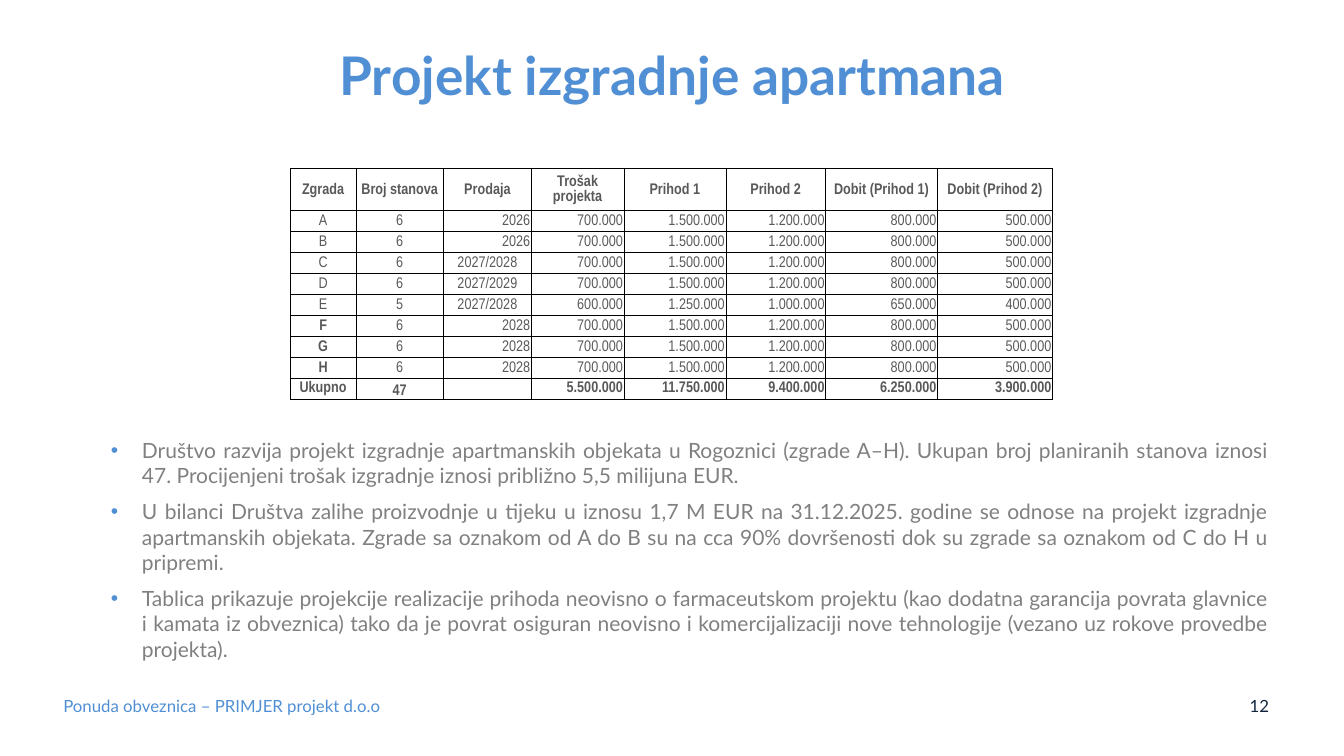
from dataclasses import dataclass

from lxml import etree
from pptx import Presentation
from pptx.dml.color import RGBColor
from pptx.enum.text import MSO_ANCHOR, PP_ALIGN
from pptx.oxml.ns import qn
from pptx.slide import Slide
from pptx.table import _Cell
from pptx.text.text import TextFrame, _Paragraph
from pptx.util import Inches, Pt

LEFT, CENTER, RIGHT, JUSTIFY = PP_ALIGN.LEFT, PP_ALIGN.CENTER, PP_ALIGN.RIGHT, PP_ALIGN.JUSTIFY
TOP, MIDDLE, BOTTOM = MSO_ANCHOR.TOP, MSO_ANCHOR.MIDDLE, MSO_ANCHOR.BOTTOM

BLUE = RGBColor(0x51, 0x8F, 0xD5)
NAVY = RGBColor(0x0F, 0x25, 0x3E)
GRAY = RGBColor(0x80, 0x80, 0x80)
DARK_GRAY = RGBColor(0x59, 0x59, 0x59)
BLACK = RGBColor(0x00, 0x00, 0x00)

TEXT_FONT = "Lato"
TABLE_FONT = "Arial Narrow"
TABLE_SIZE = 11
BULLET_INDENT = 0.31

HEADERS = ("Zgrada", "Broj stanova", "Prodaja", "Trošak projekta", "Prihod 1", "Prihod 2",
           "Dobit (Prihod 1)", "Dobit (Prihod 2)")
COLUMN_WIDTHS = (0.65, 0.87, 0.87, 0.92, 1.01, 0.99, 1.11, 1.14)
TABLE_HEIGHT = 2.29
HEADER_HEIGHT = 0.42
LARGE_BUILDING = ("700.000", "1.500.000", "1.200.000", "800.000", "500.000")
SMALL_BUILDING = ("600.000", "1.250.000", "1.000.000", "650.000", "400.000")
BUILDINGS = (
    ("A", "6", "2026", *LARGE_BUILDING),
    ("B", "6", "2026", *LARGE_BUILDING),
    ("C", "6", "2027/2028", *LARGE_BUILDING),
    ("D", "6", "2027/2029", *LARGE_BUILDING),
    ("E", "5", "2027/2028", *SMALL_BUILDING),
    ("F", "6", "2028", *LARGE_BUILDING),
    ("G", "6", "2028", *LARGE_BUILDING),
    ("H", "6", "2028", *LARGE_BUILDING),
)
TOTALS = ("Ukupno", "47", "", "5.500.000", "11.750.000", "9.400.000", "6.250.000", "3.900.000")
BOLD_BUILDINGS = ("F", "G", "H")

COMMENTS = (
    "Društvo razvija projekt izgradnje apartmanskih objekata u Rogoznici (zgrade A–H). "
    "Ukupan broj planiranih stanova iznosi 47. Procijenjeni trošak izgradnje iznosi "
    "približno 5,5 milijuna EUR.",
    "U bilanci Društva zalihe proizvodnje u tijeku u iznosu 1,7 M EUR na 31.12.2025. godine "
    "se odnose na projekt izgradnje apartmanskih objekata. Zgrade sa oznakom od A do B su na "
    "cca 90% dovršenosti dok su zgrade sa oznakom od C do H u pripremi.",
    "Tablica prikazuje projekcije realizacije prihoda neovisno o farmaceutskom projektu (kao "
    "dodatna garancija povrata glavnice i kamata iz obveznica) tako da je povrat osiguran "
    "neovisno i komercijalizaciji nove tehnologije (vezano uz rokove provedbe projekta).",
)


@dataclass(frozen=True)
class TextBlock:
    paragraphs: tuple[str, ...]
    left: float
    top: float
    width: float
    height: float
    size: float
    color: RGBColor
    align: PP_ALIGN = LEFT
    anchor: MSO_ANCHOR = MIDDLE
    bold: bool = False
    line_spacing: float = 1.0
    bulleted: bool = False


TEXT_BLOCKS = (
    TextBlock(("Projekt izgradnje apartmana",), 0.92, 0.4, 11.5, 0.75, 38, BLUE, CENTER,
              bold=True, line_spacing=0.9),
    TextBlock(("Ponuda obveznica – PRIMJER projekt d.o.o",), 0.53, 6.8, 4.5, 0.4, 12, BLUE),
    TextBlock(("12",), 12.24, 6.8, 0.5, 0.4, 12, NAVY, CENTER),
    TextBlock(COMMENTS, 1, 4.29, 11.68, 2.71, 15, GRAY, JUSTIFY, TOP, bulleted=True),
)


def set_font(paragraph: _Paragraph, name: str, size: float, color: RGBColor, bold: bool) -> None:
    font = paragraph.font
    font.name, font.size, font.bold = name, Pt(size), bold
    font.color.rgb = color


def add_bullet(paragraph: _Paragraph) -> None:
    properties = paragraph._p.get_or_add_pPr()
    properties.set("marL", str(Inches(BULLET_INDENT)))
    properties.set("indent", str(-Inches(BULLET_INDENT)))
    bullet_color = etree.SubElement(properties, qn("a:buClr"))
    etree.SubElement(bullet_color, qn("a:srgbClr"), val=str(BLUE))
    etree.SubElement(properties, qn("a:buFont"), typeface="Arial")
    etree.SubElement(properties, qn("a:buChar"), char="•")


def add_text_block(slide: Slide, block: TextBlock) -> None:
    box = slide.shapes.add_textbox(Inches(block.left), Inches(block.top),
                                   Inches(block.width), Inches(block.height))
    frame: TextFrame = box.text_frame
    frame.word_wrap = True
    frame.vertical_anchor = block.anchor
    frame.text = "\n".join(block.paragraphs)
    for paragraph in frame.paragraphs:
        paragraph.alignment = block.align
        paragraph.line_spacing = block.line_spacing
        if block.bulleted:
            paragraph.space_after = Pt(8)
            add_bullet(paragraph)
        set_font(paragraph, TEXT_FONT, block.size, block.color, block.bold)


def add_borders(cell: _Cell) -> None:
    properties = cell._tc.get_or_add_tcPr()
    for side in ("a:lnL", "a:lnR", "a:lnT", "a:lnB"):
        border = etree.SubElement(properties, qn(side), w=str(Pt(0.5)))
        fill = etree.SubElement(border, qn("a:solidFill"))
        etree.SubElement(fill, qn("a:srgbClr"), val=str(BLACK))


def fill_cell(cell: _Cell, text: str, align: PP_ALIGN, anchor: MSO_ANCHOR, bold: bool) -> None:
    cell.margin_left = cell.margin_right = cell.margin_top = Inches(0.01)
    cell.margin_bottom = 0
    cell.vertical_anchor = anchor
    add_borders(cell)
    cell.fill.background()
    cell.text = text
    paragraph = cell.text_frame.paragraphs[0]
    paragraph.alignment = align
    set_font(paragraph, TABLE_FONT, TABLE_SIZE, DARK_GRAY, bold)
    if not text:
        # An empty cell takes its line height from the end-of-paragraph size.
        etree.SubElement(paragraph._p, qn("a:endParaRPr"), sz=str(TABLE_SIZE * 100))


def add_building_table(slide: Slide) -> None:
    rows = (HEADERS, *BUILDINGS, TOTALS)
    table = slide.shapes.add_table(len(rows), len(HEADERS), Inches(2.88), Inches(1.67),
                                   Inches(sum(COLUMN_WIDTHS)), Inches(TABLE_HEIGHT)).table
    table.first_row = table.horz_banding = False
    for column, width in zip(table.columns, COLUMN_WIDTHS):
        column.width = Inches(width)
    building_height = (TABLE_HEIGHT - HEADER_HEIGHT) / (len(rows) - 1)
    for row_index, row in enumerate(rows):
        table.rows[row_index].height = Inches(building_height if row_index else HEADER_HEIGHT)
        for column_index, text in enumerate(row):
            centered = row is HEADERS or column_index < 2 or "/" in text
            bold = row in (HEADERS, TOTALS) or text in BOLD_BUILDINGS
            total_flats = row is TOTALS and column_index == 1
            fill_cell(table.cell(row_index, column_index), text, CENTER if centered else RIGHT,
                      BOTTOM if total_flats else MIDDLE, bold)


def main() -> None:
    presentation = Presentation()
    presentation.slide_width, presentation.slide_height = Inches(13.33), Inches(7.5)
    slide = presentation.slides.add_slide(presentation.slide_layouts[6])
    for block in TEXT_BLOCKS:
        add_text_block(slide, block)
    add_building_table(slide)
    presentation.save("out.pptx")


if __name__ == "__main__":
    main()
